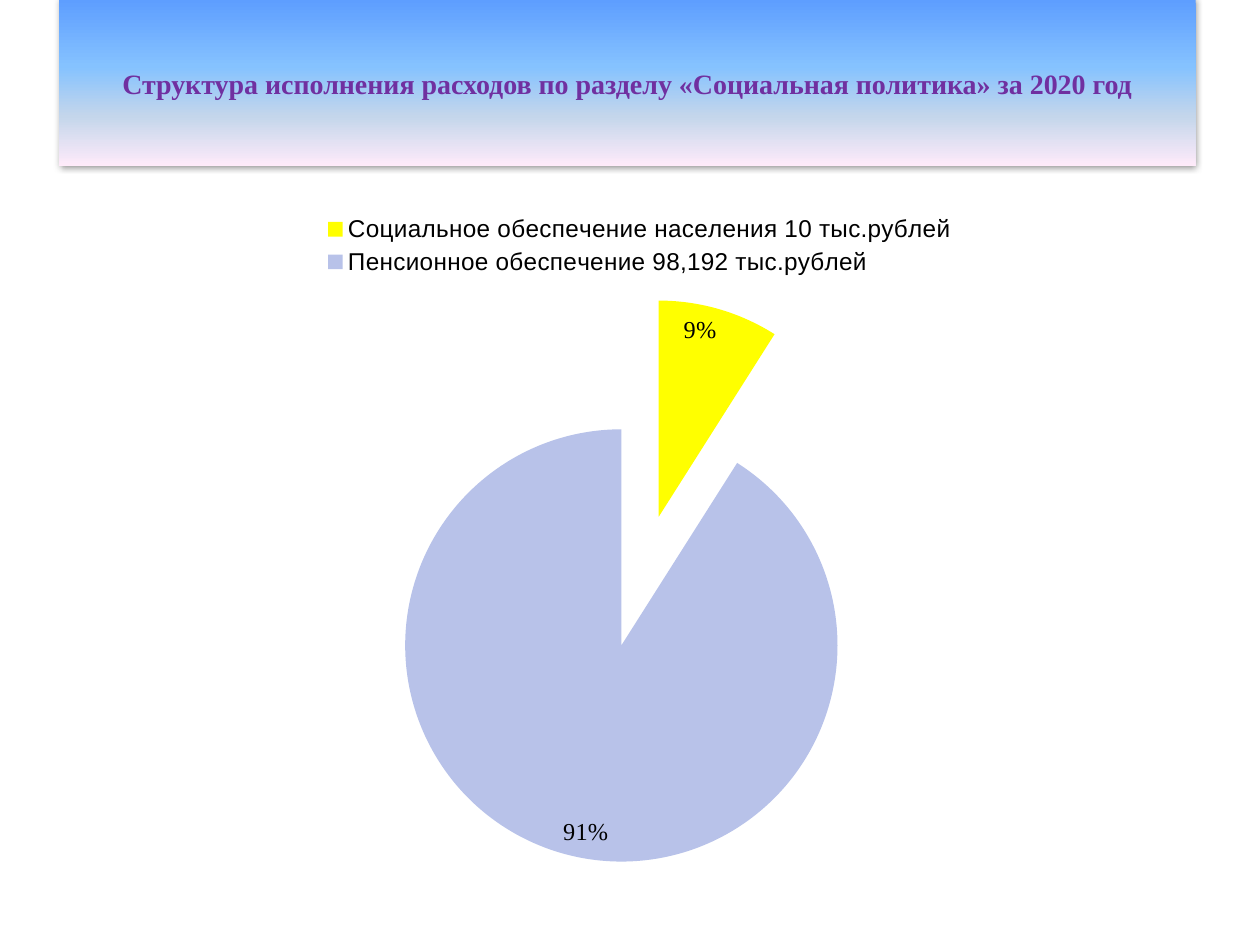
from dataclasses import dataclass

from lxml.etree import SubElement
from pptx import Presentation
from pptx.chart.data import CategoryChartData
from pptx.dml.color import RGBColor as RGB
from pptx.enum.chart import XL_CHART_TYPE as ChartType
from pptx.enum.chart import XL_LABEL_POSITION as LabelPos
from pptx.enum.chart import XL_LEGEND_POSITION as LegendPos
from pptx.enum.text import MSO_ANCHOR as Anchor
from pptx.enum.text import PP_ALIGN as Align
from pptx.oxml import parse_xml
from pptx.oxml.ns import nsdecls, qn
from pptx.util import Inches, Pt

TITLE = "Структура исполнения расходов по разделу «Социальная политика» за 2020 год"
# Category, share in percent, slice colour
SLICES = [
    ("Социальное обеспечение населения 10 тыс.рублей", 9, "FFFF00"),
    ("Пенсионное обеспечение 98,192 тыс.рублей", 91, "B8C2E9"),
]


@dataclass(frozen=True)
class Theme:
    title_font: str = "Times New Roman"
    legend_font: str = "Arial"
    chart_font: str = "Cabin"
    title_size: float = 16
    chart_size: float = 15.7
    label_size: float = 13.9
    title_color: str = "7030A0"
    text_color: str = "000000"
    # Position in percent, colour
    banner: tuple = ((0, "5E9EFF"), (40, "85C2FF"), (70, "C4D6EB"), (100, "FFEBFA"))


THEME = Theme()


def set_font(font, name, size, color=THEME.text_color, bold=False):
    font.name, font.size, font.bold = name, Pt(size), bold
    font.color.rgb = RGB.from_string(color)


def place(sp, width, height, *box):
    """Position a shape by shares of the slide's size."""
    x, y, w, h = box
    sp.left, sp.width = int(width * x), int(width * w)
    sp.top, sp.height = int(height * y), int(height * h)


def add_banner_style(sp):
    """Vertical gradient and a soft shadow below."""
    stops = "".join(
        f'<a:gs pos="{pos * 1000}"><a:srgbClr val="{color}"/></a:gs>'
        for pos, color in THEME.banner
    )
    ns = nsdecls("a")
    sp_pr = sp.element.spPr
    sp_pr.append(parse_xml(
        f'<a:gradFill {ns} rotWithShape="1"><a:gsLst>{stops}</a:gsLst>'
        '<a:lin ang="5400000" scaled="0"/></a:gradFill>'
    ))
    sp_pr.append(parse_xml(
        f'<a:effectLst {ns}><a:outerShdw blurRad="{Pt(4)}" dist="0" dir="5400000">'
        '<a:srgbClr val="000000"><a:alpha val="43000"/></a:srgbClr>'
        '</a:outerShdw></a:effectLst>'
    ))


def add_title(s, width, height):
    sp = s.shapes.title
    place(sp, width, height, 0.047, 0, 0.902, 0.176)
    add_banner_style(sp)
    tf = sp.text_frame
    tf.text, tf.word_wrap, tf.vertical_anchor = TITLE, True, Anchor.MIDDLE
    p = tf.paragraphs[0]
    p.alignment = Align.CENTER
    set_font(p.font, THEME.title_font, THEME.title_size, THEME.title_color, True)


def explode(series, percent):
    ser = series._element
    node = SubElement(ser, qn("c:explosion"))
    node.set("val", str(percent))
    ser.find(qn("c:dPt")).addprevious(node)


def add_pie(s, width, height):
    data = CategoryChartData()
    data.categories = [name for name, _, _ in SLICES]
    data.add_series("Series 1", [share for _, share, _ in SLICES])
    frame = s.shapes.add_chart(ChartType.PIE, 0, 0, width, height, data)
    place(frame, width, height, 0.112, 0.213, 0.792, 0.72)
    chart = frame.chart
    chart.has_title = False
    set_font(chart.font, THEME.chart_font, THEME.chart_size)

    # Legend above the pie
    chart.has_legend = True
    chart.legend.position = LegendPos.TOP
    chart.legend.include_in_layout = False
    set_font(chart.legend.font, THEME.legend_font, THEME.label_size)

    # Slices pulled apart
    plot = chart.plots[0]
    plot.vary_by_categories = True
    series = plot.series[0]
    for i, (_, _, color) in enumerate(SLICES):
        fmt = series.points[i].format
        fmt.fill.solid()
        fmt.fill.fore_color.rgb = RGB.from_string(color)
        fmt.line.fill.background()
    explode(series, 31)

    # Percentages inside the rim
    labels = series.data_labels
    labels.show_percentage, labels.show_value = True, False
    labels.number_format, labels.number_format_is_linked = "0%", False
    labels.position = LabelPos.INSIDE_END
    set_font(labels.font, THEME.title_font, THEME.label_size)


def main():
    prs = Presentation()
    prs.slide_width, prs.slide_height = size = Inches(10), Inches(7.5)
    s = prs.slides.add_slide(prs.slide_layouts[5])
    add_title(s, *size)
    add_pie(s, *size)
    prs.save("out.pptx")


if __name__ == "__main__":
    main()
